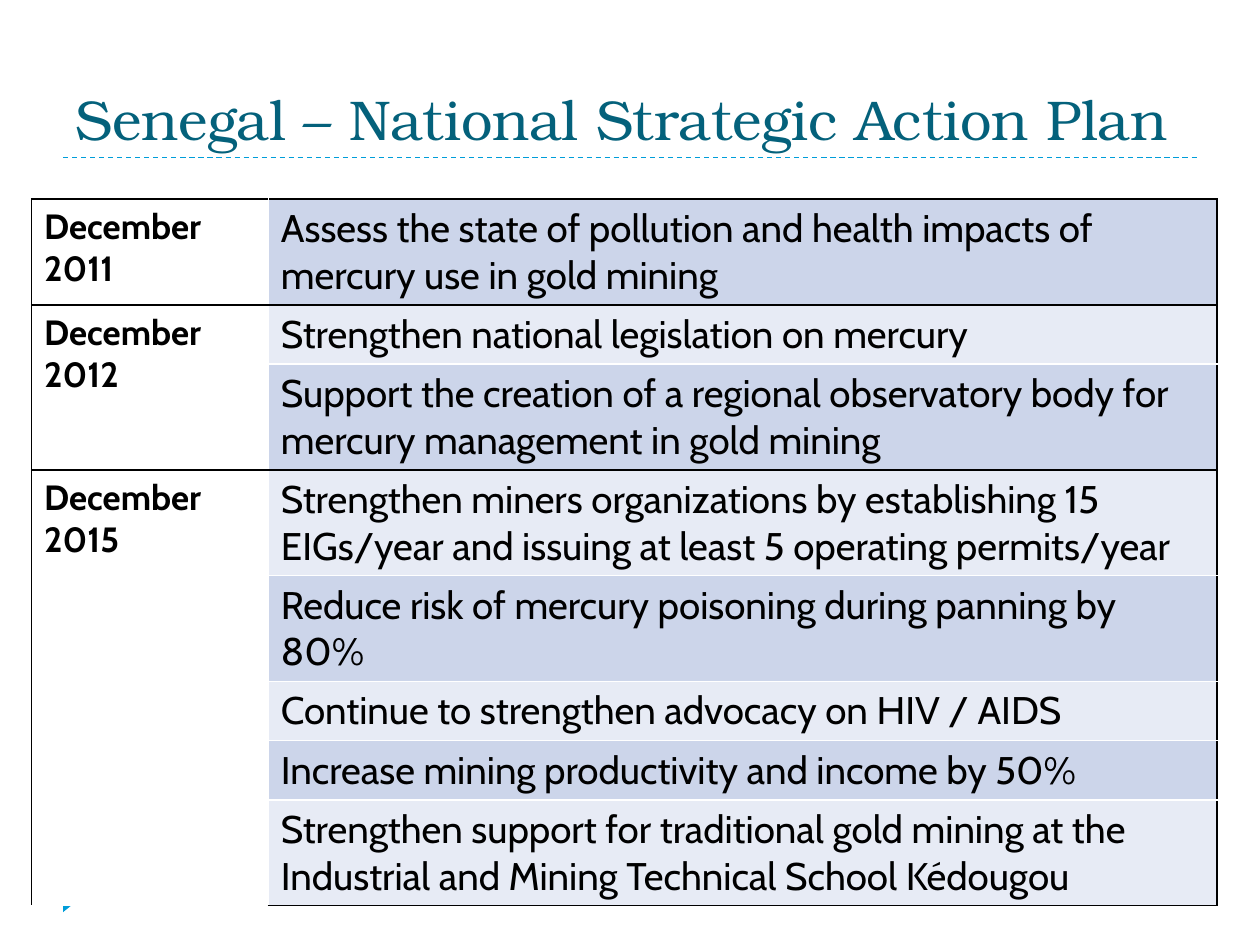
from dataclasses import dataclass

import pptx
import pptx.dml.color
import pptx.enum.dml
import pptx.enum.shapes
import pptx.enum.text
import pptx.oxml
import pptx.oxml.ns
import pptx.util
from lxml import etree

Inches = pptx.util.Inches
Pt = pptx.util.Pt


@dataclass(frozen=True)
class Theme:
    title_font: str = "TeX Gyre Bonum"
    body_font: str = "Cabin"
    title_size: int = 32
    date_size: int = 20
    action_size: int = 22
    title_color: str = "04617B"
    accent: str = "009DD9"
    text: str = "000000"
    paper: str = "FFFFFF"
    bands: tuple = ("CCD5EA", "E7EBF5")


PLAN = [
    ("December 2011", [
        "Assess the state of pollution and health impacts of mercury use in gold mining",
    ]),
    ("December 2012", [
        "Strengthen national legislation on mercury",
        "Support the creation of a regional observatory body for mercury management in gold mining",
    ]),
    ("December 2015", [
        "Strengthen miners organizations by establishing 15 EIGs/year and issuing "
        "at least 5 operating permits/year",
        "Reduce risk of mercury poisoning during panning by 80%",
        "Continue to strengthen advocacy on HIV / AIDS",
        "Increase mining productivity and income by 50%",
        "Strengthen support for traditional gold mining at the Industrial and Mining "
        "Technical School Kédougou",
    ]),
]
ONE_LINE, TWO_LINES = 0.47, 0.84
LINE_CAPACITY = 50


def rgb(value):
    return pptx.dml.color.RGBColor.from_string(value)


class SlideBuilder:
    def __init__(self, slide, theme):
        self.slide = slide
        self.theme = theme

    def set_text(self, frame, text, font, size, color, bold=False):
        paragraph = frame.paragraphs[0]
        paragraph.text = text
        paragraph.font.name = font
        paragraph.font.size = Pt(size)
        paragraph.font.bold = bold
        paragraph.font.color.rgb = rgb(color)

    def title(self, text, left, top, width, height):
        box = self.slide.shapes.add_textbox(
            Inches(left), Inches(top), Inches(width), Inches(height))
        frame = box.text_frame
        frame.word_wrap = True
        frame.vertical_anchor = pptx.enum.text.MSO_ANCHOR.BOTTOM
        self.set_text(frame, text, self.theme.title_font, self.theme.title_size,
                      self.theme.title_color)

    def dashed_rule(self, left, right, y):
        rule = self.slide.shapes.add_connector(
            pptx.enum.shapes.MSO_CONNECTOR.STRAIGHT,
            Inches(left), Inches(y), Inches(right), Inches(y))
        rule.line.color.rgb = rgb(self.theme.accent)
        rule.line.width = Pt(0.75)
        rule.line.dash_style = pptx.enum.dml.MSO_LINE.DASH
        etree.SubElement(rule._element.spPr, pptx.oxml.ns.qn("a:effectLst"))

    def page_marker(self, left, top, width, height):
        marker = self.slide.shapes.add_shape(
            pptx.enum.shapes.MSO_SHAPE.ISOSCELES_TRIANGLE,
            Inches(left), Inches(top), Inches(width), Inches(height))
        marker.rotation = 90
        marker.shadow.inherit = False
        marker.fill.solid()
        marker.fill.fore_color.rgb = rgb(self.theme.accent)
        marker.line.fill.background()

    def cell_style(self, cell, fill, left, right, top, bottom):
        """Set the four border colours, then the fill that must follow them."""
        properties = cell._tc.get_or_add_tcPr()
        for side, color in zip("LRTB", (left, right, top, bottom)):
            properties.append(pptx.oxml.parse_xml(
                f'<a:ln{side} {pptx.oxml.ns.nsdecls("a")} w="12700">'
                f'<a:solidFill><a:srgbClr val="{color}"/></a:solidFill></a:ln{side}>'))
        cell.fill.solid()
        cell.fill.fore_color.rgb = rgb(fill)

    def plan_table(self, plan, left, top, widths):
        theme = self.theme
        heights = [TWO_LINES if len(action) > LINE_CAPACITY else ONE_LINE
                   for _, actions in plan for action in actions]
        table = self.slide.shapes.add_table(
            len(heights), len(widths), Inches(left), Inches(top),
            Inches(sum(widths)), Inches(sum(heights))).table
        table.first_row = False
        table.horz_banding = False
        for column, width in zip(table.columns, widths):
            column.width = Inches(width)
        for row, height in zip(table.rows, heights):
            row.height = Inches(height)

        first = 0
        for date, actions in plan:
            last = first + len(actions) - 1
            for index, action in enumerate(actions, first):
                upper = theme.text if index == first else theme.paper
                lower = theme.text if index == last else theme.paper
                self.cell_style(table.cell(index, 0), theme.paper,
                                theme.text, theme.paper, upper, lower)
                action_cell = table.cell(index, 1)
                self.cell_style(action_cell, theme.bands[index % 2],
                                theme.paper, theme.text, upper, lower)
                self.set_text(action_cell.text_frame, action, theme.body_font,
                              theme.action_size, theme.text)
            date_cell = table.cell(first, 0)
            if last > first:
                date_cell.merge(table.cell(last, 0))
            self.set_text(date_cell.text_frame, date, theme.body_font,
                          theme.date_size, theme.text, bold=True)
            first = last + 1


def main():
    deck = pptx.Presentation()
    deck.slide_width, deck.slide_height = Inches(10), Inches(7.5)
    builder = SlideBuilder(deck.slides.add_slide(deck.slide_layouts[6]), Theme())
    builder.dashed_rule(0.5, 9.5, 1.25)
    builder.page_marker(0.46, 7.07, 0.21, 0.13)
    builder.title("Senegal – National Strategic Action Plan", 0.5, 0.17, 9, 1.08)
    builder.plan_table(PLAN, 0.25, 1.58, (1.88, 7.53))
    deck.save("out.pptx")


if __name__ == "__main__":
    main()
